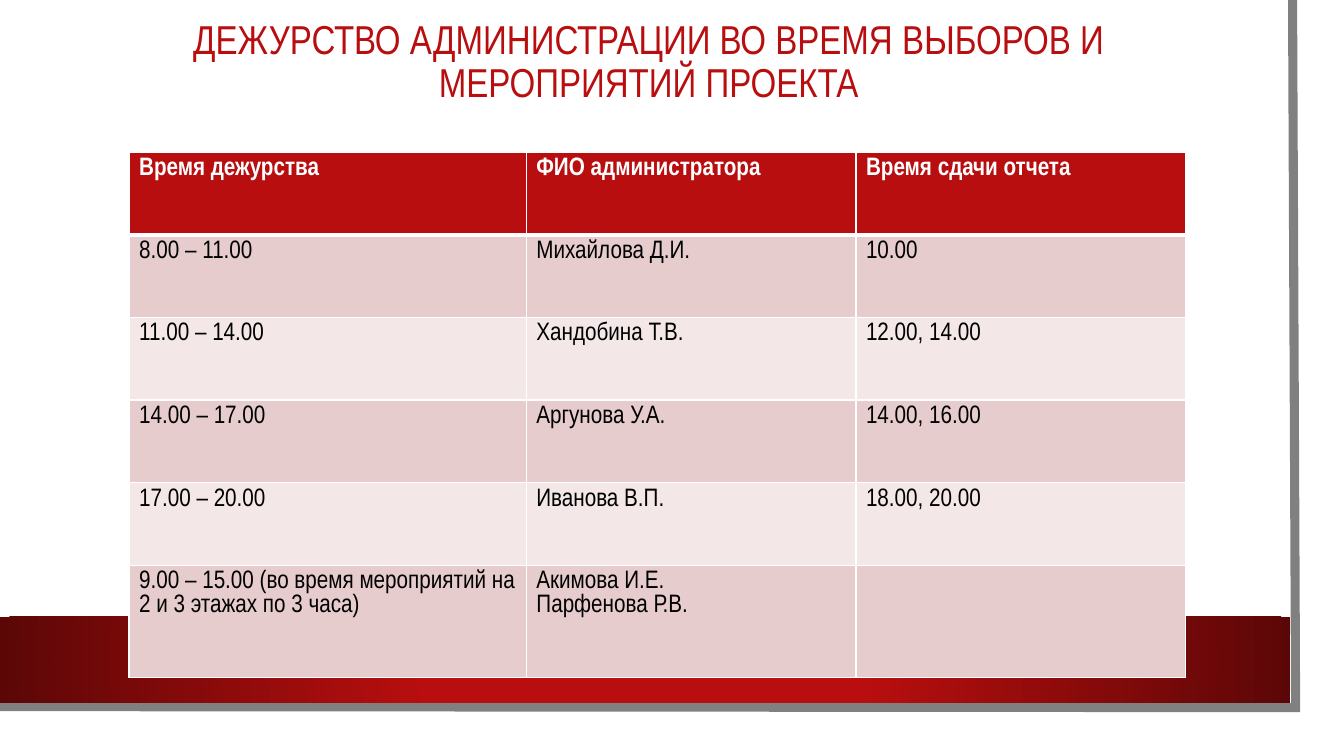
"""Build the slide with the administration duty schedule."""

from dataclasses import dataclass

from lxml.etree import SubElement
from pptx import Presentation
from pptx.dml.color import RGBColor
from pptx.enum.shapes import MSO_SHAPE
from pptx.enum.text import MSO_ANCHOR, MSO_AUTO_SIZE, PP_ALIGN
from pptx.oxml import parse_xml
from pptx.oxml.ns import nsdecls, qn
from pptx.slide import Slide
from pptx.table import _Cell
from pptx.text.text import _Paragraph
from pptx.util import Inches, Pt


@dataclass(frozen=True)
class Theme:
    font: str = "Arial Narrow"
    red: str = "B80E0F"
    dark_red: str = "5C0707"
    gray: str = "808080"
    white: str = "FFFFFF"
    black: str = "000000"
    bands: tuple[str, str] = ("E6CCCC", "F3E7E7")
    title_size: float = 28.8
    table_size: float = 18
    title_spacing: float = 0.9
    table_spacing: float = 1.0


@dataclass(frozen=True)
class Duty:
    time: str
    administrator: str
    report: str


THEME = Theme()
TITLE = "ДЕЖУРСТВО АДМИНИСТРАЦИИ ВО ВРЕМЯ ВЫБОРОВ И МЕРОПРИЯТИЙ ПРОЕКТА"
DUTIES = [
    Duty("Время дежурства", "ФИО администратора", "Время сдачи отчета"),
    Duty("8.00 – 11.00", "Михайлова Д.И.", "10.00"),
    Duty("11.00 – 14.00", "Хандобина Т.В.", "12.00, 14.00"),
    Duty("14.00 – 17.00", "Аргунова У.А.", "14.00, 16.00"),
    Duty("17.00 – 20.00", "Иванова В.П.", "18.00, 20.00"),
    Duty("9.00 – 15.00 (во время мероприятий на 2 и 3 этажах по 3 часа)",
         "Акимова И.Е.\nПарфенова Р.В.", ""),
]
COLUMN_WIDTHS = (3.94, 3.27, 3.27)
ROW_HEIGHTS = (0.82,) * 5 + (1.11,)
FRAME = ((12.82, 0), (12.85, 7.02), (-0.03, 7.01))


def format_paragraph(paragraph: _Paragraph, size: float, color: str,
                     spacing: float, bold: bool = False) -> None:
    paragraph.line_spacing = spacing
    paragraph.font.name = THEME.font
    paragraph.font.size = Pt(size)
    paragraph.font.bold = bold
    paragraph.font.color.rgb = RGBColor.from_string(color)


def add_frame(slide: Slide) -> None:
    start, *corners = [(Inches(x), Inches(y)) for x, y in FRAME]
    builder = slide.shapes.build_freeform(*start)
    builder.add_line_segments(corners, close=False)
    frame = builder.convert_to_shape()
    frame.shadow.inherit = False
    frame.fill.background()
    frame.line.color.rgb = RGBColor.from_string(THEME.gray)
    frame.line.width = Pt(6.5)
    outline = frame._element.spPr.find(qn("a:ln"))
    SubElement(outline, qn("a:miter")).set("lim", "800000")


def add_band(slide: Slide) -> None:
    band = slide.shapes.add_shape(
        MSO_SHAPE.RECTANGLE, 0, Inches(6.12), Inches(12.8), Inches(0.85))
    band.shadow.inherit = False
    band.line.fill.background()
    band.fill.gradient()
    properties = band._element.spPr
    gradient = parse_xml(
        f'<a:gradFill {nsdecls("a")} rotWithShape="1"><a:gsLst>'
        f'<a:gs pos="34000"><a:srgbClr val="{THEME.red}"/></a:gs>'
        f'<a:gs pos="100000"><a:srgbClr val="{THEME.dark_red}"/></a:gs>'
        '</a:gsLst><a:path path="circle">'
        '<a:fillToRect l="50000" t="50000" r="50000" b="50000"/>'
        '</a:path></a:gradFill>')
    properties.replace(properties.find(qn("a:gradFill")), gradient)


def add_title(slide: Slide) -> None:
    title = slide.shapes.title
    title.left, title.top = Inches(0.75), Inches(0.24)
    title.width, title.height = Inches(11.37), Inches(0.77)
    frame = title.text_frame
    frame.text = TITLE
    frame.word_wrap = True
    frame.auto_size = MSO_AUTO_SIZE.NONE
    frame.vertical_anchor = MSO_ANCHOR.MIDDLE
    paragraph = frame.paragraphs[0]
    paragraph.alignment = PP_ALIGN.CENTER
    format_paragraph(paragraph, THEME.title_size, THEME.red, THEME.title_spacing)


def set_borders(cell: _Cell, top: float, bottom: float) -> None:
    properties = cell._tc.get_or_add_tcPr()
    widths = {"a:lnL": 1, "a:lnR": 1, "a:lnT": top, "a:lnB": bottom}
    for index, (tag, width) in enumerate(widths.items()):
        line = parse_xml(f'<{tag} {nsdecls("a")} w="{Pt(width)}"/>')
        fill = SubElement(line, qn("a:solidFill"))
        SubElement(fill, qn("a:srgbClr")).set("val", THEME.white)
        properties.insert(index, line)


def add_schedule(slide: Slide) -> None:
    table = slide.shapes.add_table(
        len(DUTIES), len(COLUMN_WIDTHS), Inches(1.28), Inches(1.51),
        Inches(sum(COLUMN_WIDTHS)), Inches(sum(ROW_HEIGHTS))).table
    for column, width in zip(table.columns, COLUMN_WIDTHS):
        column.width = Inches(width)
    for index, (row, height, duty) in enumerate(
            zip(table.rows, ROW_HEIGHTS, DUTIES)):
        row.height = Inches(height)
        header = index == 0
        fill = THEME.red if header else THEME.bands[(index - 1) % 2]
        color = THEME.white if header else THEME.black
        texts = (duty.time, duty.administrator, duty.report)
        for cell, text in zip(row.cells, texts):
            cell.text = text
            cell.fill.solid()
            cell.fill.fore_color.rgb = RGBColor.from_string(fill)
            set_borders(cell, 3 if index == 1 else 1, 3 if header else 1)
            for paragraph in cell.text_frame.paragraphs:
                format_paragraph(paragraph, THEME.table_size, color,
                                 THEME.table_spacing, header)


def main() -> None:
    presentation = Presentation()
    presentation.slide_width = Inches(13.33)
    presentation.slide_height = Inches(7.5)
    slide = presentation.slides.add_slide(presentation.slide_layouts[5])
    add_frame(slide)
    add_band(slide)
    add_title(slide)
    add_schedule(slide)
    presentation.save("out.pptx")


if __name__ == "__main__":
    main()
